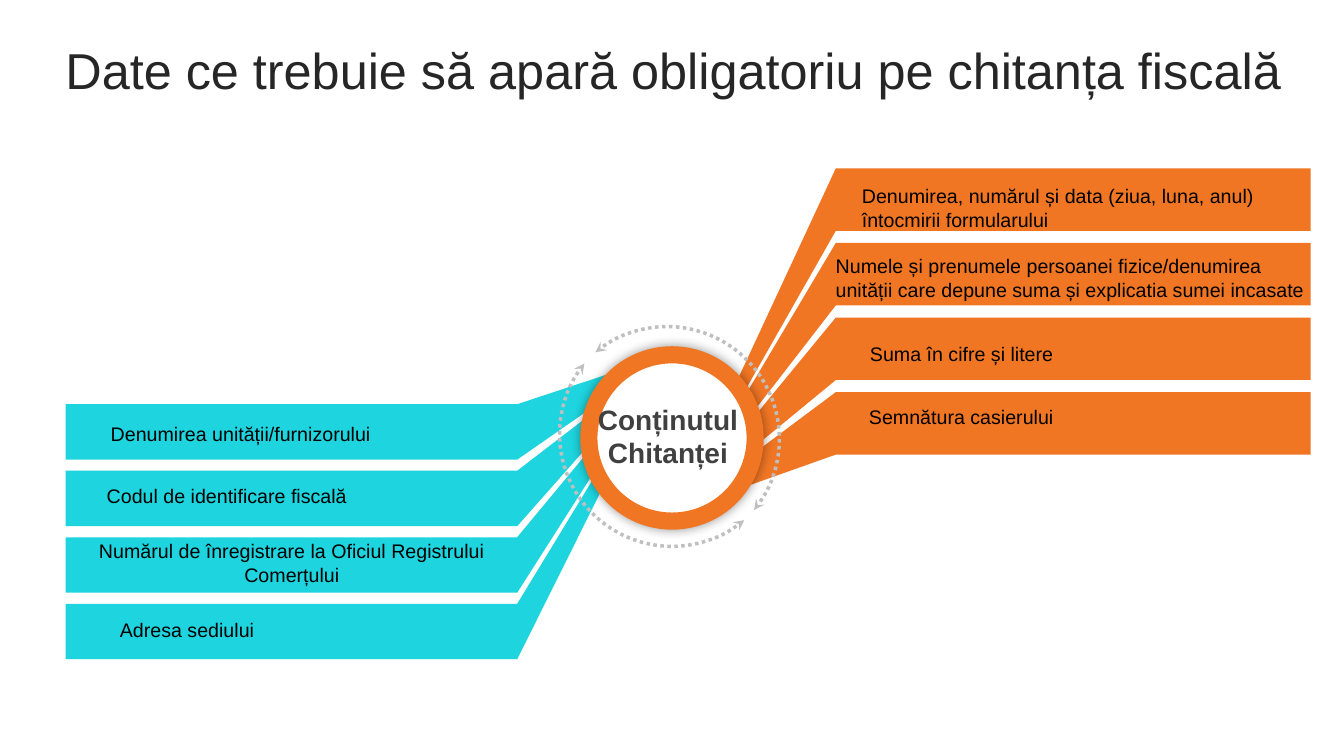
from lxml.etree import SubElement
from pptx import Presentation
from pptx.dml.color import RGBColor
from pptx.enum.dml import MSO_LINE
from pptx.enum.shapes import MSO_SHAPE
from pptx.enum.text import MSO_ANCHOR, MSO_AUTO_SIZE, PP_ALIGN
from pptx.oxml.ns import qn
from pptx.util import Inches, Pt

ORANGE = RGBColor(0xF0, 0x76, 0x24)
TURQUOISE = RGBColor(0x1E, 0xD4, 0xDE)
WHITE = RGBColor(0xFF, 0xFF, 0xFF)
BLACK = RGBColor(0, 0, 0)
TITLE_GREY = RGBColor(0x26, 0x26, 0x26)
HUB_GREY = RGBColor(0x40, 0x40, 0x40)
ARC_GREY = RGBColor(0xBF, 0xBF, 0xBF)

# Fans: bars stacked at an even pitch, each with a ray to the apex
FANS = [
    {"left": 8.29, "top": 1.67, "width": 4.71, "height": 0.62, "pitch": 0.74,
     "inner": 8.29, "apex": (6.71, 5.07), "color": ORANGE},
    {"left": 0.65, "top": 4.01, "width": 4.48, "height": 0.55, "pitch": 0.66,
     "inner": 5.13, "apex": (6.64, 3.51), "color": TURQUOISE},
]

LABELS = [
    ("Denumirea, numărul și data (ziua, luna, anul) întocmirii formularului",
     (8.45, 1.78, 4.1, 0.57), PP_ALIGN.LEFT),
    ("Numele și prenumele persoanei fizice/denumirea unității care depune "
     "suma și explicatia sumei incasate",
     (8.19, 2.47, 4.96, 0.57), PP_ALIGN.LEFT),
    ("Suma în cifre și litere", (8.53, 3.34, 2.99, 0.34), PP_ALIGN.LEFT),
    ("Semnătura casierului", (8.52, 3.97, 2.99, 0.34), PP_ALIGN.LEFT),
    ("Denumirea unității/furnizorului", (1, 4.14, 2.83, 0.34), PP_ALIGN.LEFT),
    ("Codul de identificare fiscală", (0.96, 4.75, 2.83, 0.34), PP_ALIGN.LEFT),
    ("Numărul de înregistrare la Oficiul Registrului Comerțului",
     (0.78, 5.3, 4.23, 0.57), PP_ALIGN.CENTER),
    ("Adresa sediului", (1.09, 6.08, 2.83, 0.34), PP_ALIGN.LEFT),
]


def inches(values):
    return [Inches(v) for v in values]


def write(tf, text, align, color, **font):
    p = tf.paragraphs[0]
    p.alignment = align
    r = p.add_run()
    r.text = text
    r.font.color.rgb = color
    for name, value in {"name": "Arial", **font}.items():
        setattr(r.font, name, value)
    return p


def paint(sp, color):
    sp.shadow.inherit = False
    sp.fill.solid()
    sp.fill.fore_color.rgb = color
    sp.line.fill.background()


def add_title(s, text):
    sp = s.shapes.title
    sp.left, sp.top, sp.width, sp.height = inches((0.35, 0.33, 12.66, 0.79))
    tf = sp.text_frame
    tf.word_wrap = True
    tf.auto_size = MSO_AUTO_SIZE.NONE
    tf.vertical_anchor = MSO_ANCHOR.MIDDLE
    p = write(tf, text, PP_ALIGN.CENTER, TITLE_GREY, size=Pt(36))
    p.line_spacing = 0.9


def add_text(s, text, box, align, color, **font):
    tf = s.shapes.add_textbox(*inches(box)).text_frame
    tf.word_wrap = True
    tf.auto_size = MSO_AUTO_SIZE.SHAPE_TO_FIT_TEXT
    write(tf, text, align, color, **font)


def add_fan(s, fan, count=4):
    for i in range(count):
        top = fan["top"] + i * fan["pitch"]
        bar = s.shapes.add_shape(MSO_SHAPE.RECTANGLE, *inches(
            (fan["left"], top, fan["width"], fan["height"])))
        paint(bar, fan["color"])
        builder = s.shapes.build_freeform(Inches(fan["inner"]), Inches(top))
        builder.add_line_segments([
            inches(fan["apex"]),
            inches((fan["inner"], top + fan["height"]))])
        paint(builder.convert_to_shape(), fan["color"])


def add_hub(s):
    sp = s.shapes.add_shape(MSO_SHAPE.OVAL, *inches((5.84, 3.52, 1.65, 1.65)))
    paint(sp, WHITE)
    sp.line.color.rgb = ORANGE
    sp.line.width = Pt(12.25)
    # Soft shadow all round
    effects = sp.element.spPr.find(qn("a:effectLst"))
    shadow = SubElement(effects, qn("a:outerShdw"), blurRad=str(Pt(8)),
                        dist="0", dir="0", algn="ctr", rotWithShape="0")
    color = SubElement(shadow, qn("a:srgbClr"), val="000000")
    SubElement(color, qn("a:alpha"), val="40000")


def add_arc(s, left, top, rotation):
    sp = s.shapes.add_shape(MSO_SHAPE.ARC, *inches((left, top, 2.23, 2.23)))
    sp.shadow.inherit = False
    sp.fill.background()
    sp.rotation = rotation
    sp.adjustments[0], sp.adjustments[1] = 111.57, 212.83
    line = sp.line
    line.color.rgb = ARC_GREY
    line.width = Pt(2.5)
    line.dash_style = MSO_LINE.ROUND_DOT
    ln = sp.element.spPr.find(qn("a:ln"))
    ln.find(qn("a:prstDash")).set("val", "sysDot")
    for end in ("a:headEnd", "a:tailEnd"):
        SubElement(ln, qn(end), type="stealth")


def main():
    prs = Presentation()
    prs.slide_width, prs.slide_height = Inches(13.33), Inches(7.5)
    s = prs.slides.add_slide(prs.slide_layouts[5])
    add_title(s, "Date ce trebuie să apară obligatoriu pe chitanța fiscală")

    # Fans behind the hub
    for fan in FANS:
        add_fan(s, fan)
    add_hub(s)

    # Labels on the bars
    for text, box, align in LABELS:
        add_text(s, text, box, align, BLACK, size=Pt(14))

    # Arrows round the hub, and its caption
    add_arc(s, 5.55, 3.19, 224.1)
    add_arc(s, 5.5, 3.24, 44.5)
    add_text(s, "Conținutul Chitanței", (5.78, 3.94, 1.69, 0.77),
             PP_ALIGN.CENTER, HUB_GREY, size=Pt(20), bold=True)
    prs.save("out.pptx")


if __name__ == "__main__":
    main()
